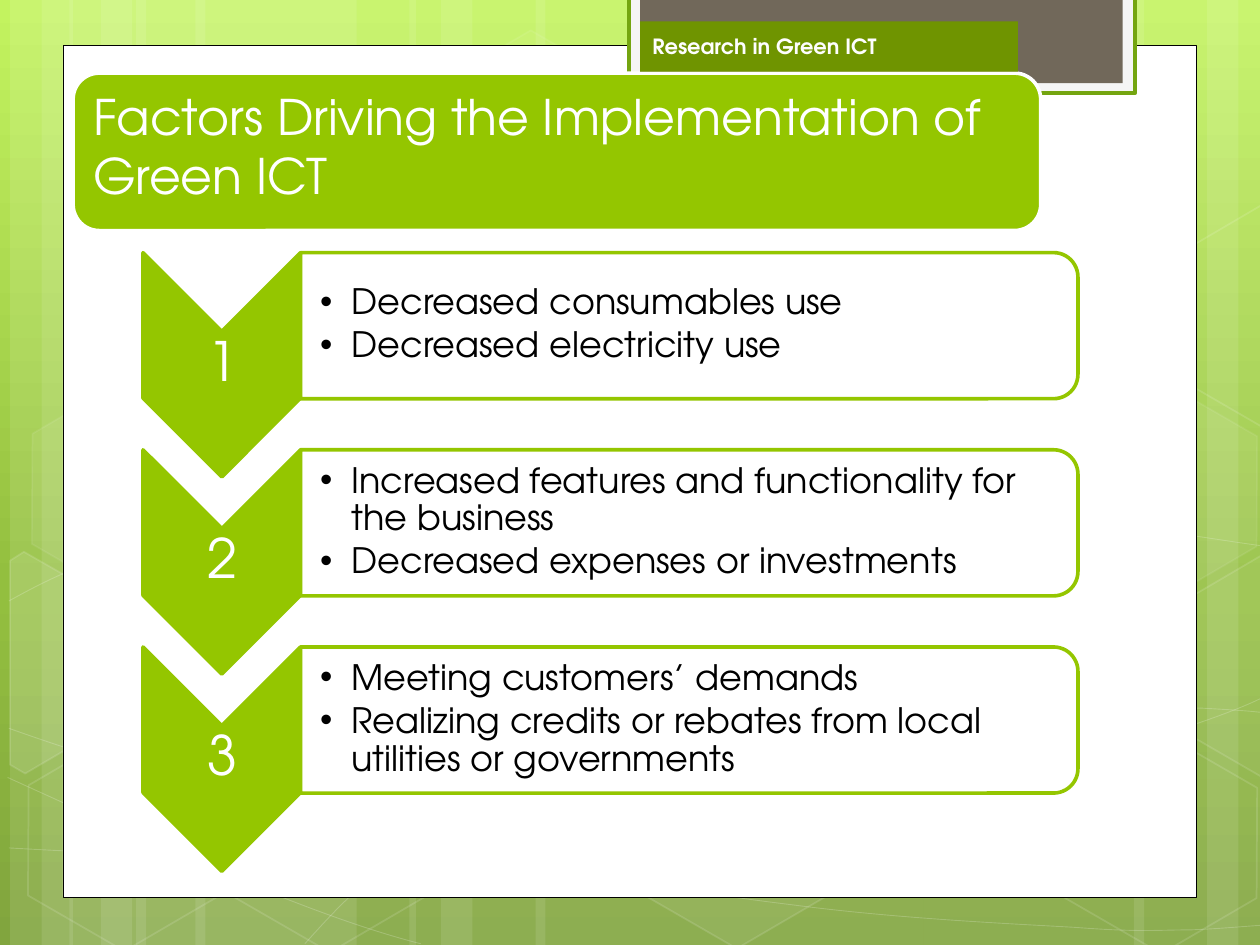
from copy import deepcopy
from lxml.etree import SubElement
from pptx import Presentation
from pptx.dml.color import RGBColor
from pptx.enum.shapes import MSO_SHAPE
from pptx.enum.text import MSO_ANCHOR, PP_ALIGN
from pptx.oxml.ns import qn
from pptx.util import Inches, Pt

FONT = "TeX Gyre Adventor"
BULLET_FONT = "Arial"
WHITE = RGBColor(0xFF, 0xFF, 0xFF)
BLACK = RGBColor(0, 0, 0)
GREEN = RGBColor(0x94, 0xC6, 0x00)
DARK_GREEN = RGBColor(0x6F, 0x94, 0x00)
FRAME_GREEN = RGBColor(0x74, 0xA5, 0x10)
BROWN = RGBColor(0x71, 0x68, 0x5A)
PALE_GREY = RGBColor(0xF5, 0xF5, 0xF5)
TAG_WHITE = RGBColor(0xFE, 0xFE, 0xFE)
GRADIENT = [
    (0, RGBColor(0xC3, 0xF3, 0x5F)),
    (0.62, RGBColor(0x93, 0xBF, 0x3F)),
    (1, RGBColor(0x81, 0xA5, 0x3E)),
]

TITLE = "Factors Driving the Implementation of Green ICT"
TAG = "Research in Green ICT"
FACTORS = [
    ["Decreased consumables use", "Decreased electricity use"],
    ["Increased features and functionality for the business",
     "Decreased expenses or investments"],
    ["Meeting customers’ demands",
     "Realizing credits or rebates from local utilities or governments"],
]
FIRST_ROW, LAST_ROW = 2.01, 5.14
ROW_PITCH = (LAST_ROW - FIRST_ROW) / (len(FACTORS) - 1)

BARS = [
    (1.08, 1.75), (0.08, 0.5), (0.33, 0.83), (1.55, 1.75), (0.55, 0.5), (0.8, 0.83),
    (7.33, 1.75), (9.58, 0.5), (9, 0.83), (4.25, 3.08), (3.25, 0.5), (3.5, 0.83),
]
CURVES = [
    [(0.07, 6.73), (0.61, 6.76, 1.15, 6.79, 1.9, 6.78), (2.65, 6.77, 3.58, 6.75, 4.58, 6.65),
     (5.58, 6.55, 7, 6.36, 7.92, 6.17), (8.83, 5.98, 9.77, 5.68, 10.07, 5.51)],
    [(0.07, 4.77), (0.36, 4.61, 0.65, 4.46, 1.21, 4.31), (1.78, 4.16, 2.59, 3.94, 3.47, 3.87),
     (4.36, 3.8, 5.44, 3.79, 6.54, 3.87), (7.64, 3.95, 9.47, 4.26, 10.07, 4.34)],
    [(0.06, 6.17), (1.27, 6.72, 2.47, 7.27, 3.34, 7.49)],
    [(0.07, 5.78), (0.38, 5.89, 0.7, 6, 1.28, 6.16), (1.86, 6.31, 2.73, 6.56, 3.57, 6.73),
     (4.4, 6.9, 5.45, 7.08, 6.28, 7.18), (7.11, 7.29, 8, 7.33, 8.53, 7.36),
     (9.05, 7.4, 9.19, 7.38, 9.45, 7.38), (9.71, 7.37, 9.89, 7.35, 10.07, 7.34)],
    [(2.42, 7.49), (2.6, 7.29, 2.78, 7.09, 3.02, 6.91), (3.26, 6.73, 3.6, 6.53, 3.88, 6.39),
     (4.16, 6.25, 4.33, 6.19, 4.7, 6.09), (5.06, 5.99, 5.73, 5.85, 6.08, 5.78),
     (6.44, 5.71, 6.49, 5.71, 6.8, 5.69), (7.11, 5.66, 7.6, 5.63, 7.94, 5.62),
     (8.29, 5.61, 8.86, 5.62, 8.86, 5.62), (9.53, 5.62),
     (9.71, 5.63, 9.88, 5.64, 9.97, 5.65), (10.06, 5.66, 10.03, 5.65, 10.06, 5.66)],
]
HEXAGONS = [
    (3.34, 0.36, 4, 8), (4.97, 5.89, 6, 12), (0.11, 5.91, None, 12),
    (0.14, 3.12, 7, 8), (1.74, 5.92, None, 12), (7.53, 4.53, 10, 12),
    (8.34, 5.93, None, 12), (8.34, 3.14, 7, 8),
]
CUT_HEXAGONS = [
    ([(0.08, 4.45), (0.19, 4.38), (0.96, 4.82), (0.95, 5.7), (0.2, 6.14), (0.08, 6.07)], 10),
    ([(9.26, 4.85), (10.01, 4.41), (10.09, 4.46), (10.09, 6.13), (10.02, 6.17), (9.26, 5.73)], 4),
    ([(9.26, 2.07), (10.01, 1.63), (10.1, 1.68), (10.09, 3.35), (10.02, 3.39), (9.26, 2.95)], None),
]


def set_opacity(parent, percent):
    color = parent.find(qn("a:solidFill")).find(qn("a:srgbClr"))
    SubElement(color, qn("a:alpha"), val=str(percent * 1000))


def style(shape, fill=None, fill_opacity=100, line=None, line_width=2.08, line_opacity=100):
    shape.shadow.inherit = False
    properties = shape._element.spPr
    if fill is None:
        shape.fill.background()
    else:
        shape.fill.solid()
        shape.fill.fore_color.rgb = fill
        if fill_opacity < 100:
            set_opacity(properties, fill_opacity)
    if line is None:
        shape.line.fill.background()
    else:
        shape.line.color.rgb = line
        shape.line.width = Pt(line_width)
        if line_opacity < 100:
            set_opacity(properties.find(qn("a:ln")), line_opacity)
    return shape


def add_box(slide, kind, left, top, width, height, **look):
    shape = slide.shapes.add_shape(kind, Inches(left), Inches(top), Inches(width), Inches(height))
    return style(shape, **look)


def add_outline(slide, points, close, **look):
    corners = [(Inches(x), Inches(y)) for x, y in points]
    builder = slide.shapes.build_freeform(*corners[0])
    builder.add_line_segments(corners[1:], close=close)
    return style(builder.convert_to_shape(), **look)


def add_curve(slide, segments, **look):
    points = [segment[i:i + 2] for segment in segments for i in range(0, len(segment), 2)]
    shape = add_outline(slide, points, False, **look)
    lines = iter(list(shape._element.spPr.iter(qn("a:lnTo"))))
    for segment in segments[1:]:
        first = next(lines)
        if len(segment) == 6:
            curve = first.getparent().makeelement(qn("a:cubicBezTo"), {})
            first.addprevious(curve)
            for line in (first, next(lines), next(lines)):
                curve.append(line[0])
                line.getparent().remove(line)


def write_text(shape, lines, size, color, bold=False, align=PP_ALIGN.LEFT,
               anchor=MSO_ANCHOR.MIDDLE, insets=(0.1, 0.05, 0.1, 0.05),
               spacing=1.0, space_after=0, bullet=False):
    frame = shape.text_frame
    frame.word_wrap = True
    frame.vertical_anchor = anchor
    (frame.margin_left, frame.margin_top,
     frame.margin_right, frame.margin_bottom) = map(Inches, insets)
    for index, line in enumerate(lines):
        paragraph = frame.paragraphs[0] if index == 0 else frame.add_paragraph()
        paragraph.alignment = align
        paragraph.line_spacing = spacing
        paragraph.space_after = Pt(space_after)
        if bullet:
            properties = paragraph._p.get_or_add_pPr()
            properties.set("marL", str(Inches(0.25)))
            properties.set("indent", str(Inches(-0.25)))
            SubElement(properties, qn("a:buFont"), typeface=BULLET_FONT)
            SubElement(properties, qn("a:buChar"), char="•")
        run = paragraph.add_run()
        run.text = line
        run.font.name = FONT
        run.font.size = Pt(size)
        run.font.bold = bold
        run.font.color.rgb = color


def paint_background(slide):
    fill = slide.background.fill
    fill.gradient()
    fill.gradient_angle = 270
    first_stop = fill.gradient_stops[0]._gs
    first_stop.addnext(deepcopy(first_stop))
    for stop, (position, color) in zip(fill.gradient_stops, GRADIENT):
        stop.position = position
        stop.color.rgb = color


def add_backdrop(slide):
    for left, width in BARS:
        add_box(slide, MSO_SHAPE.RECTANGLE, left, 0, width, 7.5, fill=WHITE, fill_opacity=10)
    for segments in CURVES:
        add_curve(slide, segments, line=WHITE, line_width=0.5, line_opacity=20)
    for left, top, opacity, line_opacity in HEXAGONS:
        hexagon = add_box(slide, MSO_SHAPE.HEXAGON, left, top, 1.75, 1.52,
                          fill=WHITE if opacity else None, fill_opacity=opacity or 100,
                          line=WHITE, line_width=1, line_opacity=line_opacity)
        hexagon.adjustments[0] = 0.285
        hexagon.rotation = 30
    for points, opacity in CUT_HEXAGONS:
        add_outline(slide, points, True, fill=WHITE if opacity else None,
                    fill_opacity=opacity or 100, line=WHITE, line_width=1, line_opacity=12)
    add_box(slide, MSO_SHAPE.RECTANGLE, 0.5, 0.36, 9, 6.76, fill=WHITE, line=BLACK, line_width=0.5)
    add_box(slide, MSO_SHAPE.RECTANGLE, 4.99, -0.02, 4.02, 0.76, fill=PALE_GREY, line=FRAME_GREEN)
    add_box(slide, MSO_SHAPE.RECTANGLE, 5.08, -0.02, 3.83, 0.68, fill=BROWN)


def add_text_box(slide, left, top, width, height, lines, **text_format):
    box = slide.shapes.add_textbox(Inches(left), Inches(top), Inches(width), Inches(height))
    write_text(box, lines, spacing=0.9, **text_format)


def add_factor(slide, number, lines):
    top = FIRST_ROW + (number - 1) * ROW_PITCH
    chevron = add_box(slide, MSO_SHAPE.CHEVRON, 0.87, top + 0.26, 1.78, 1.25,
                      fill=GREEN, line=GREEN)
    chevron.rotation = 90
    add_text_box(slide, 1.14, top + 0.61, 1.25, 0.53, [str(number)], size=31, color=WHITE,
                 align=PP_ALIGN.CENTER, insets=(0.02,) * 4)
    panel = add_box(slide, MSO_SHAPE.ROUND_2_SAME_RECTANGLE, 4.89, top - 2.51, 1.16, 6.17,
                    fill=WHITE, fill_opacity=90, line=GREEN)
    panel.rotation = 90
    add_text_box(slide, 2.39, top + 0.05, 6.11, 1.04, lines, size=20, color=BLACK,
                 insets=(0.15, 0.01, 0.01, 0.01), space_after=3, bullet=True)


def main():
    presentation = Presentation()
    presentation.slide_width, presentation.slide_height = Inches(10), Inches(7.5)
    slide = presentation.slides.add_slide(presentation.slide_layouts[6])
    paint_background(slide)
    add_backdrop(slide)
    for number, lines in enumerate(FACTORS, 1):
        add_factor(slide, number, lines)
    title = add_box(slide, MSO_SHAPE.ROUNDED_RECTANGLE, 0.58, 0.58, 7.68, 1.25,
                    fill=GREEN, line=WHITE)
    write_text(title, [TITLE], 28, WHITE, anchor=MSO_ANCHOR.TOP)
    tag = add_box(slide, MSO_SHAPE.RECTANGLE, 5.08, 0.17, 3, 0.4, fill=DARK_GREEN)
    write_text(tag, [TAG], 12, TAG_WHITE, bold=True)
    presentation.save("out.pptx")


if __name__ == "__main__":
    main()
